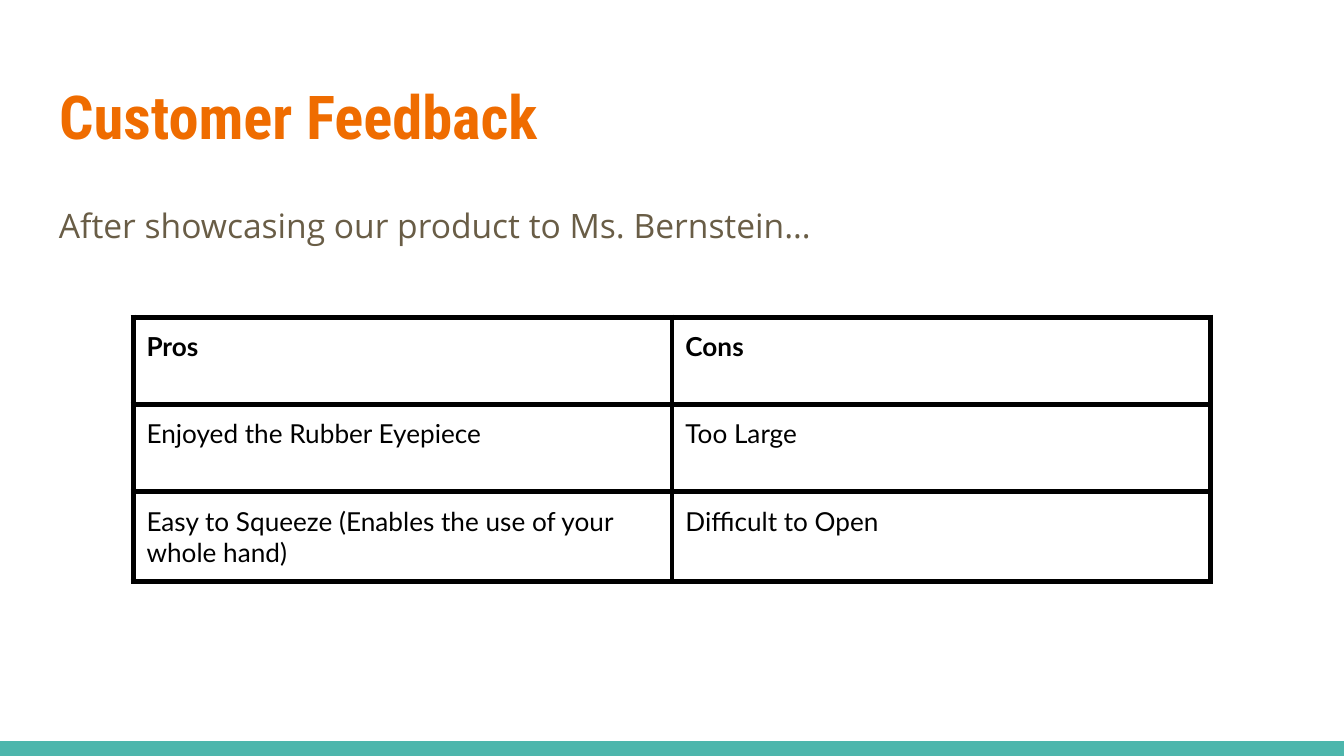
"""Build the customer feedback slide with a table of pros and cons."""
from lxml import etree
from pptx import Presentation
from pptx import util as u
from pptx.dml.color import RGBColor
from pptx.enum import shapes, text
from pptx.oxml import ns

TITLE = "Customer Feedback"
INTRODUCTION = "After showcasing our product to Ms. Bernstein…"
FEEDBACK = [
    ("Pros", "Cons"),
    ("Enjoyed the Rubber Eyepiece", "Too Large"),
    ("Easy to Squeeze (Enables the use of your whole hand)", "Difficult to Open"),
]
COLORS = {"title": "EF6C00", "body": "695D46", "table": "000000", "bar": "4DB6AC"}
SLIDE_WIDTH = 10
SLIDE_HEIGHT = SLIDE_WIDTH * 9 / 16
BAR_HEIGHT = 0.11
BORDER_POINTS = 3
COLUMN_WIDTH, ROW_HEIGHT = 4.01, 0.65
MARGIN = u.Inches(0.1)


def color(value):
    return RGBColor.from_string(value)


def box(left, top, width, height):
    return [u.Inches(length) for length in (left, top, width, height)]


def write(frame, content, font_name, size, value, bold=False):
    frame.text = content
    frame.word_wrap = True
    frame.margin_left = frame.margin_right = MARGIN
    frame.margin_top = frame.margin_bottom = MARGIN
    paragraph = frame.paragraphs[0]
    paragraph.alignment = text.PP_ALIGN.LEFT
    font = paragraph.runs[0].font
    font.name, font.size, font.bold = font_name, u.Pt(size), bold
    font.color.rgb = color(value)
    return paragraph


def add_borders(cell, value):
    properties = cell._tc.get_or_add_tcPr()
    for position, side in enumerate(("lnL", "lnR", "lnT", "lnB")):
        line = etree.Element(ns.qn(f"a:{side}"), w=str(u.Pt(BORDER_POINTS)))
        fill = etree.SubElement(line, ns.qn("a:solidFill"))
        etree.SubElement(fill, ns.qn("a:srgbClr"), val=value)
        properties.insert(position, line)


def add_feedback_table(slide):
    rows, columns = len(FEEDBACK), len(FEEDBACK[0])
    area = box(0.99, 2.36, columns * COLUMN_WIDTH, rows * ROW_HEIGHT)
    table = slide.shapes.add_table(rows, columns, *area).table
    table.first_row = table.horz_banding = False
    for row, entries in enumerate(FEEDBACK):
        for column, entry in enumerate(entries):
            cell = table.cell(row, column)
            write(cell.text_frame, entry, "Lato", 14, COLORS["table"], row == 0)
            cell.margin_left = cell.margin_right = MARGIN
            cell.margin_top = cell.margin_bottom = MARGIN
            cell.fill.background()
            add_borders(cell, COLORS["table"])


def main():
    presentation = Presentation()
    presentation.slide_width = u.Inches(SLIDE_WIDTH)
    presentation.slide_height = u.Inches(SLIDE_HEIGHT)
    slide = presentation.slides.add_slide(presentation.slide_layouts[5])

    bar_area = box(0, SLIDE_HEIGHT - BAR_HEIGHT, SLIDE_WIDTH, BAR_HEIGHT)
    bar = slide.shapes.add_shape(shapes.MSO_SHAPE.RECTANGLE, *bar_area)
    bar.shadow.inherit = False
    bar.fill.solid()
    bar.fill.fore_color.rgb = color(COLORS["bar"])
    bar.line.fill.background()

    title = slide.shapes.title
    title.left, title.top, title.width, title.height = box(0.34, 0.49, 9.32, 0.77)
    write(title.text_frame, TITLE, "Roboto Condensed", 32.4, COLORS["title"], True)
    title.text_frame.auto_size = text.MSO_AUTO_SIZE.NONE
    title.text_frame.vertical_anchor = text.MSO_ANCHOR.TOP

    introduction = slide.shapes.add_textbox(*box(0.34, 1.38, 9.32, 3.61))
    paragraph = write(introduction.text_frame, INTRODUCTION, "Open Sans", 18, COLORS["body"])
    paragraph.line_spacing = 1.15

    add_feedback_table(slide)
    presentation.save("out.pptx")


if __name__ == "__main__":
    main()
